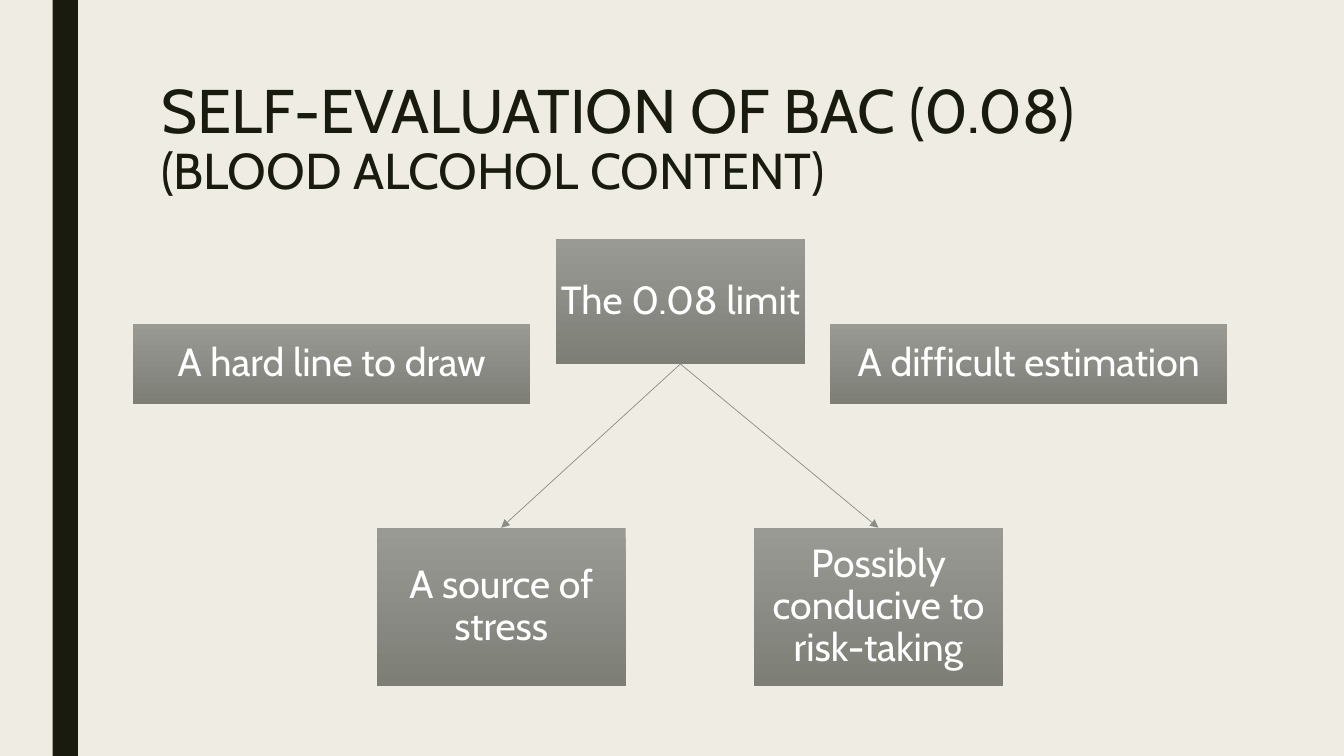
"""Build the slide on self-evaluation of blood alcohol content."""
from lxml import etree
from pptx import Presentation
from pptx.dml.color import RGBColor
from pptx.enum import shapes, text
from pptx.oxml import ns
from pptx.util import Pt

COLORS = {
    "paper": "EFEDE3",
    "ink": "191B0E",
    "light": "999A94",
    "mid": "8C8D86",
    "dark": "7D7E76",
    "white": "FFFFFF",
}
FONT = "Cabin"


def rgb(name):
    return RGBColor.from_string(COLORS[name])


def add_run(p, words, size, color):
    r = p.add_run()
    r.text = words
    r.font.name = FONT
    r.font.size = Pt(size)
    r.font.color.rgb = rgb(color)


prs = Presentation()
prs.slide_width, prs.slide_height = Pt(960), Pt(540)
s = prs.slides.add_slide(prs.slide_layouts[5])
s.background.fill.solid()
s.background.fill.fore_color.rgb = rgb("paper")

bar = s.shapes.add_shape(shapes.MSO_SHAPE.RECTANGLE, Pt(37.6), 0, Pt(18), Pt(540))
bar.shadow.inherit = False
bar.fill.solid()
bar.fill.fore_color.rgb = rgb("ink")
bar.line.fill.background()

title = s.shapes.title
title.left, title.top, title.width, title.height = Pt(108), Pt(54), Pt(756), Pt(117)
tf = title.text_frame
tf.auto_size = text.MSO_AUTO_SIZE.NONE
tf.vertical_anchor = text.MSO_ANCHOR.TOP
p = tf.paragraphs[0]
p.alignment = text.PP_ALIGN.LEFT
p.line_spacing = 0.89
add_run(p, "SELF-EVALUATION OF BAC (0.08)", 44, "ink")
p.add_line_break()
add_run(p, "(BLOOD ALCOHOL CONTENT)", 36, "ink")

boxes = {}
for key, words, left, top, width, height in [
    ("limit", "The 0.08 limit", 397, 171, 178, 89),
    ("line", "A hard line to draw", 95, 231.5, 283.5, 57),
    ("estimate", "A difficult estimation", 593, 231.5, 283.5, 57),
    ("stress", "A source of stress", 269, 377, 178, 113),
    ("risk", "Possibly conducive to risk-taking", 538.5, 377, 178, 113),
]:
    sp = s.shapes.add_shape(
        shapes.MSO_SHAPE.RECTANGLE, Pt(left), Pt(top), Pt(width), Pt(height))
    sp.shadow.inherit = False
    sp.fill.gradient()
    sp.fill.gradient_angle = 270
    for stop, color in zip(sp.fill.gradient_stops, ("light", "dark")):
        stop.color.rgb = rgb(color)
    sp.line.fill.background()
    tf = sp.text_frame
    tf.word_wrap = True
    tf.vertical_anchor = text.MSO_ANCHOR.MIDDLE
    tf.margin_left = tf.margin_right = tf.margin_top = tf.margin_bottom = Pt(1.4)
    p = tf.paragraphs[0]
    p.alignment = text.PP_ALIGN.CENTER
    p.line_spacing = 0.9
    add_run(p, words, 28, "white")
    boxes[key] = sp

for key in ("stress", "risk"):
    arrow = s.shapes.add_connector(shapes.MSO_CONNECTOR.STRAIGHT, 0, 0, 0, 0)
    arrow.begin_connect(boxes["limit"], 2)
    arrow.end_connect(boxes[key], 0)
    arrow.line.color.rgb = rgb("mid")
    arrow.line.width = Pt(0.5)
    etree.SubElement(arrow.line._get_or_add_ln(), ns.qn("a:tailEnd"), type="triangle")
    etree.SubElement(arrow._element.spPr, ns.qn("a:effectLst"))

prs.save("out.pptx")
